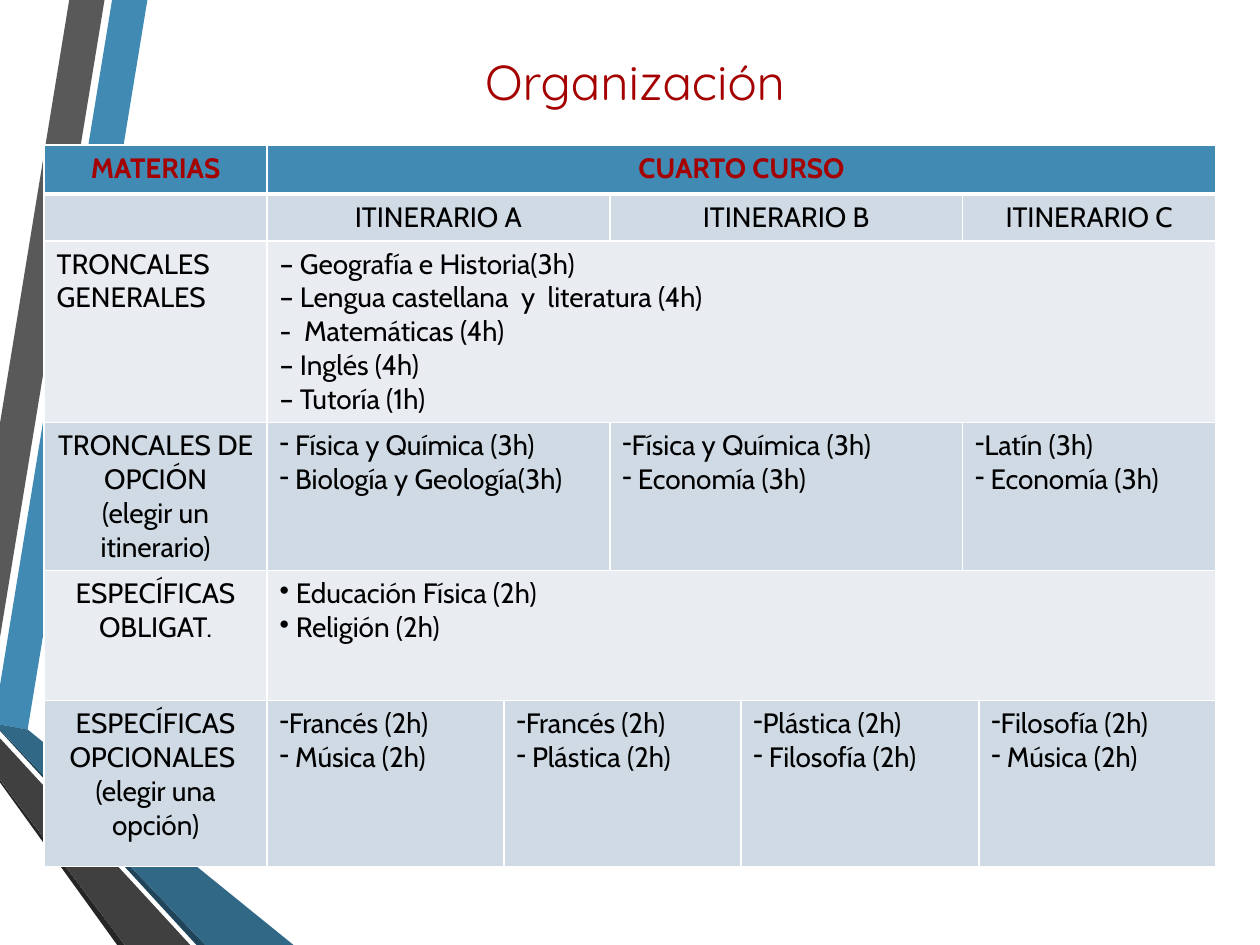
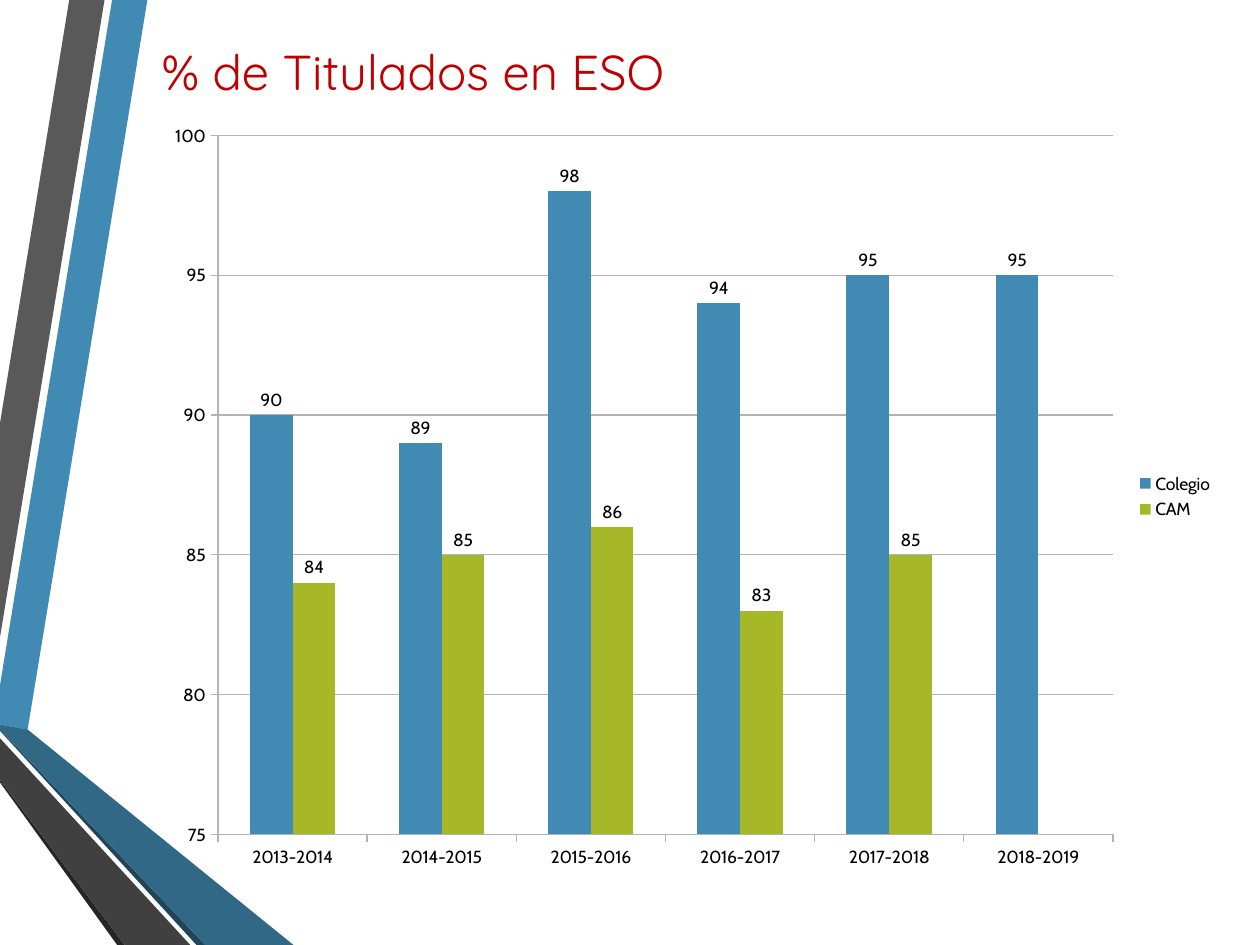
from dataclasses import dataclass
from typing import NamedTuple

from lxml.etree import SubElement
from pptx import Presentation
from pptx.chart.data import CategoryChartData
from pptx.dml.color import RGBColor
from pptx.enum.chart import XL_CHART_TYPE as ChartType, XL_LABEL_POSITION as LabelPosition
from pptx.enum.chart import XL_LEGEND_POSITION as LegendPosition, XL_TICK_MARK as TickMark
from pptx.enum.text import MSO_ANCHOR as Anchor, PP_ALIGN as Align
from pptx.oxml.ns import qn
from pptx.util import Emu, Inches, Pt


@dataclass(frozen=True)
class Theme:
    blue: str = "418AB3"
    green: str = "A6B727"
    dark_row: str = "CFDAE5"
    light_row: str = "E9EDF2"
    grid_line: str = "B3B3B3"
    white: str = "FFFFFF"
    black: str = "000000"
    heading_red: str = "A40000"
    title_red: str = "C00000"
    title_font: str = "Quicksand"
    body_font: str = "Cabin"
    title_size: int = 28
    table_size: int = 16
    chart_size: int = 10
    border: int = 1
    header_border: int = 3


THEME = Theme()

# Grid: 100 columns by 75 rows of square cells over the slide
SLIDE_WIDTH, SLIDE_HEIGHT = Inches(10), Inches(7.5)
GRID_COLUMNS = 100


def grid(cells: float) -> Emu:
    return Emu(round(cells * SLIDE_WIDTH / GRID_COLUMNS))


class Box(NamedTuple):
    left: float
    top: float
    width: float
    height: float

    def place(self) -> list[Emu]:
        return [grid(cells) for cells in self]


class Band(NamedTuple):
    color: str
    points: list[tuple[float, float]]


class Entry(NamedTuple):
    row: int
    column: int
    span: int
    lines: list[str]
    bullet: str = ""
    align: Align = Align.LEFT


class Series(NamedTuple):
    name: str
    values: list[int | None]
    color: str


# Folded ribbons on the left edge
BANDS = [
    Band(THEME.blue, [(0, 54.4), (0, 57.5), (2.2, 57.9), (11.7, 0), (8.9, 0)]),
    Band("595959", [(8.3, 0), (5.5, 0), (0, 33.6), (0, 50.6)]),
    Band("262626", [(0, 61.9), (0, 62.1), (9.3, 75), (9.9, 75)]),
    Band("20455A", [(0, 57.9), (0, 58), (15.6, 75), (16.3, 75)]),
    Band("316886", [(0, 57.9), (16.3, 75), (23.3, 75), (2.2, 57.9), (0, 57.5)]),
    Band("404040", [(0, 61.9), (9.9, 75), (15.1, 75), (0, 58.6)]),
]

# Subjects table
TABLE_BOX = Box(3.5, 11.5, 93, 57)
COLUMN_WIDTHS = [17.7, 18.8, 8.4, 10.4, 17.6, 1.3, 18.8]
ROW_HEIGHTS = [3.9, 3.6, 14.4, 11.6, 10.3, 13.2]
ROW_FILLS = [THEME.blue, THEME.dark_row] + [THEME.light_row, THEME.dark_row] * 2
ENTRIES = [
    Entry(0, 0, 1, ["MATERIAS"], align=Align.CENTER),
    Entry(0, 1, 6, ["CUARTO CURSO"], align=Align.CENTER),
    *(Entry(1, column, 2, [f"ITINERARIO {letter}"], align=Align.CENTER)
      for column, letter in zip((1, 3, 5), "ABC")),
    Entry(2, 0, 1, ["TRONCALES GENERALES"]),
    Entry(2, 1, 6, ["– Geografía e Historia(3h)", "– Lengua castellana  y  literatura (4h)",
                    "-  Matemáticas (4h)", "– Inglés (4h)", "– Tutoría (1h)"]),
    Entry(3, 0, 1, ["TRONCALES DE OPCIÓN", "(elegir un itinerario)"], align=Align.CENTER),
    Entry(3, 1, 2, [" Física y Química (3h)", " Biología y Geología(3h)"], "-"),
    Entry(3, 3, 2, ["Física y Química (3h)", " Economía (3h)"], "-"),
    Entry(3, 5, 2, ["Latín (3h)", " Economía (3h)"], "-"),
    Entry(4, 0, 1, ["ESPECÍFICAS OBLIGAT."], align=Align.CENTER),
    Entry(4, 1, 6, [" Educación Física (2h)", " Religión (2h)"], "•"),
    Entry(5, 0, 1, ["ESPECÍFICAS OPCIONALES ", "(elegir una opción)"], align=Align.CENTER),
    Entry(5, 1, 1, ["Francés (2h)", " Música (2h)"], "-"),
    Entry(5, 2, 2, ["Francés (2h)", " Plástica (2h)"], "-"),
    Entry(5, 4, 2, ["Plástica (2h)", " Filosofía (2h)"], "-"),
    Entry(5, 6, 1, ["Filosofía (2h)", " Música (2h)"], "-"),
]

# Graduates chart
CHART_BOX = Box(12.2, 8.7, 85.1, 61.4)
SCHOOL_YEARS = [f"{year}-{year + 1}" for year in range(2013, 2019)]
GRADUATES = [
    Series("Colegio", [90, 89, 98, 94, 95, 95], THEME.blue),
    Series("CAM", [84, 85, 86, 83, 85, None], THEME.green),
]


def rgb(color: str) -> RGBColor:
    return RGBColor.from_string(color)


def set_font(font, name: str, size: int, color: str, bold: bool = False) -> None:
    font.name, font.size, font.bold = name, Pt(size), bold
    font.color.rgb = rgb(color)


def add_bands(slide, layout) -> None:
    """Build the ribbons and hand them to the layout that all slides share."""
    for band in BANDS:
        start, *rest = [(grid(x), grid(y)) for x, y in band.points]
        builder = slide.shapes.build_freeform(*start)
        builder.add_line_segments(rest, close=True)
        shape = builder.convert_to_shape()
        shape.shadow.inherit = False
        shape.fill.solid()
        shape.fill.fore_color.rgb = rgb(band.color)
        shape.line.fill.background()
        layout.shapes.element.append(shape.element)


def set_title(slide, text: str, box: Box, color: str, align: Align):
    title = slide.shapes.title
    title.left, title.top, title.width, title.height = box.place()
    frame = title.text_frame
    frame.text = text
    frame.word_wrap = True
    frame.vertical_anchor = Anchor.TOP
    paragraph = frame.paragraphs[0]
    paragraph.alignment = align
    set_font(paragraph.font, THEME.title_font, THEME.title_size, color)
    return paragraph


def set_borders(cell, bottom: int) -> None:
    properties = cell._tc.get_or_add_tcPr()
    widths = {"lnL": THEME.border, "lnR": THEME.border, "lnT": THEME.border, "lnB": bottom}
    for position, (side, width) in enumerate(widths.items()):
        line = SubElement(properties, qn(f"a:{side}"), w=str(Pt(width)))
        SubElement(SubElement(line, qn("a:solidFill")), qn("a:srgbClr"), val=THEME.white)
        properties.insert(position, line)


def fill_entry(table, entry: Entry) -> None:
    cell = table.cell(entry.row, entry.column)
    if entry.span > 1:
        cell.merge(table.cell(entry.row, entry.column + entry.span - 1))
    cell.text = "\n".join(entry.lines)
    header = entry.row == 0
    color = THEME.heading_red if header else THEME.black
    for paragraph in cell.text_frame.paragraphs:
        paragraph.alignment = entry.align
        if entry.bullet:
            SubElement(paragraph._p.get_or_add_pPr(), qn("a:buChar"), char=entry.bullet)
        set_font(paragraph.font, THEME.body_font, THEME.table_size, color, header)


def add_subjects_table(slide) -> None:
    frame = slide.shapes.add_table(len(ROW_HEIGHTS), len(COLUMN_WIDTHS), *TABLE_BOX.place())
    table = frame.table
    for column, width in zip(table.columns, COLUMN_WIDTHS):
        column.width = grid(width)
    for row, height in zip(table.rows, ROW_HEIGHTS):
        row.height = grid(height)
    for entry in ENTRIES:
        fill_entry(table, entry)
    for index, (row, color) in enumerate(zip(table.rows, ROW_FILLS)):
        for cell in row.cells:
            cell.fill.solid()
            cell.fill.fore_color.rgb = rgb(color)
            set_borders(cell, THEME.border if index else THEME.header_border)
            if not cell.text:  # keeps empty cells from stretching the row
                paragraph = cell.text_frame.paragraphs[0]
                SubElement(paragraph._p, qn("a:endParaRPr"), sz=str(THEME.table_size * 100))


def add_graduates_chart(slide) -> None:
    data = CategoryChartData()
    data.categories = SCHOOL_YEARS
    for series in GRADUATES:
        data.add_series(series.name, series.values)
    chart = slide.shapes.add_chart(ChartType.COLUMN_CLUSTERED, *CHART_BOX.place(), data).chart
    set_font(chart.font, THEME.body_font, THEME.chart_size, THEME.black)
    chart.has_title = False
    chart.has_legend = True
    chart.legend.position = LegendPosition.RIGHT
    chart.legend.include_in_layout = False

    # Axes
    value_axis, category_axis = chart.value_axis, chart.category_axis
    value_axis.minimum_scale, value_axis.maximum_scale = 75, 100
    value_axis.major_unit = 5
    value_axis.has_major_gridlines = True
    for axis in (value_axis, category_axis):
        axis.major_tick_mark = TickMark.OUTSIDE
    for part in (value_axis, category_axis, value_axis.major_gridlines):
        part.format.line.color.rgb = rgb(THEME.grid_line)
        part.format.line.width = Pt(0.75)

    # Columns and their labels
    plot = chart.plots[0]
    plot.gap_width, plot.overlap = 150, 0
    plot.vary_by_categories = False
    for drawn, series in zip(plot.series, GRADUATES):
        drawn.format.fill.solid()
        drawn.format.fill.fore_color.rgb = rgb(series.color)
        drawn.data_labels.show_value = True
        drawn.data_labels.position = LabelPosition.OUTSIDE_END


def main() -> None:
    presentation = Presentation()
    presentation.slide_width, presentation.slide_height = SLIDE_WIDTH, SLIDE_HEIGHT
    layout = presentation.slide_layouts.get_by_name("Title Only")

    # Organization of the fourth year
    subjects = presentation.slides.add_slide(layout)
    add_bands(subjects, layout)
    set_title(subjects, "Organización", Box(7.5, 3.6, 85.8, 5.7), THEME.heading_red, Align.CENTER)
    add_subjects_table(subjects)

    # Share of graduates
    graduates = presentation.slides.add_slide(layout)
    add_graduates_chart(graduates)
    heading = set_title(graduates, "% de Titulados en ESO", Box(10.6, 2.8, 47.5, 5.7),
                        THEME.title_red, Align.LEFT)
    heading_properties = heading._p.get_or_add_pPr()
    heading_properties.set("marL", str(grid(4)))
    heading_properties.set("indent", str(grid(-2.8)))

    presentation.save("out.pptx")


if __name__ == "__main__":
    main()
